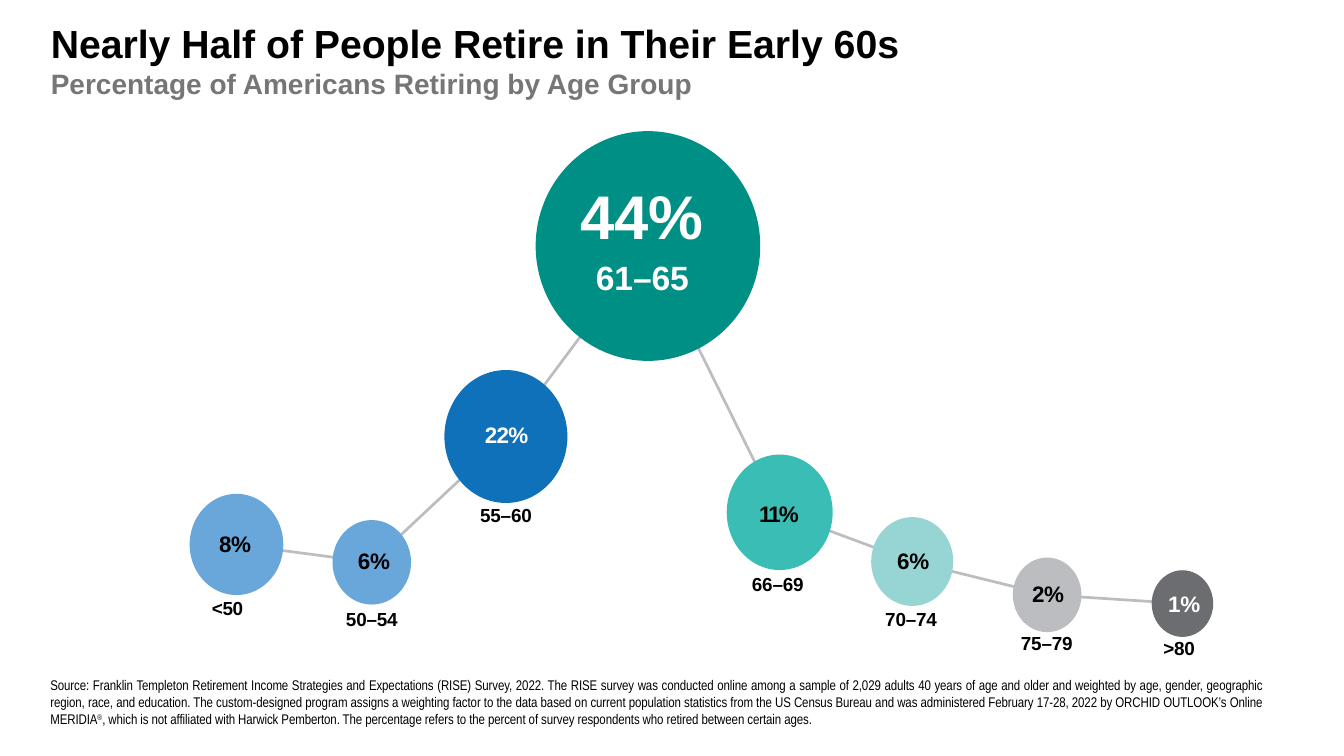
from dataclasses import dataclass

import pptx
import pptx.dml.color
import pptx.enum.shapes
import pptx.enum.text
import pptx.shapes.autoshape
import pptx.slide
import pptx.util

Cm = pptx.util.Cm
Pt = pptx.util.Pt
RGBColor = pptx.dml.color.RGBColor
Align = pptx.enum.text.PP_ALIGN

BLACK = RGBColor(0x00, 0x00, 0x00)
WHITE = RGBColor(0xFF, 0xFF, 0xFF)
GREY = RGBColor(0x76, 0x76, 0x76)
SILVER = RGBColor(0xBB, 0xBD, 0xC0)
SLATE = RGBColor(0x6C, 0x6D, 0x70)
SKY = RGBColor(0x69, 0xA6, 0xDA)
BLUE = RGBColor(0x0F, 0x71, 0xB9)
GREEN = RGBColor(0x00, 0x8F, 0x85)
TEAL = RGBColor(0x3A, 0xBD, 0xB4)
MINT = RGBColor(0x97, 0xD5, 0xD4)

# Label width in cm by number of characters
WIDTHS = {2: 0.87, 3: 1.15, 5: 1.4}


@dataclass
class Run:
    text: str
    size: float
    color: RGBColor = BLACK
    bold: bool = True
    font: str = "Arial"
    track: float = 0
    raised: int = 0


@dataclass
class Line:
    runs: list[Run]
    before: float = 0
    indent: float = 0
    align: Align = Align.LEFT


@dataclass
class Box:
    left: float
    top: float
    width: float
    height: float


@dataclass
class Label:
    text: str
    left: float
    top: float
    color: RGBColor = BLACK
    track: float = -0.2


@dataclass
class Bubble:
    x: float
    y: float
    width: float
    height: float
    fill: RGBColor
    share: Label | None = None
    age: Label | None = None


BUBBLES = [
    Bubble(5.96, 13.72, 2.36, 2.55, SKY,
           Label("8%", 5.49, 13.34), Label("<50", 5.31, 15.01)),
    Bubble(9.37, 14.17, 1.98, 2.13, SKY,
           Label("6%", 8.99, 13.77), Label("50–54", 8.69, 15.27, track=-0.1)),
    Bubble(12.75, 11, 3.1, 3.35, BLUE,
           Label("22%", 12.19, 10.59, WHITE, -0.5), Label("55–60", 12.07, 12.65, track=-0.1)),
    Bubble(16.33, 6.2, 5.66, 5.79, GREEN),
    Bubble(19.65, 12.91, 2.67, 2.91, TEAL,
           Label("11%", 19.1, 12.57, track=-1.4), Label("66–69", 18.92, 14.4, track=-0.1)),
    Bubble(22.99, 14.15, 2.07, 2.24, MINT,
           Label("6%", 22.58, 13.77), Label("70–74", 22.28, 15.27, track=-0.1)),
    Bubble(26.39, 14.99, 1.73, 1.88, SILVER,
           Label("2%", 25.98, 14.58), Label("75–79", 25.7, 15.88, track=-0.1)),
    Bubble(29.8, 15.21, 1.55, 1.68, SLATE,
           Label("1%", 29.41, 14.83, WHITE), Label(">80", 29.29, 16)),
]

NOTE = (
    "Source: Franklin Templeton Retirement Income Strategies and Expectations (RISE) Survey, 2022. "
    "The RISE survey was conducted online among a sample of 2,029 adults 40 years of age and older "
    "and weighted by age, gender, geographic region, race, and education. The custom-designed program "
    "assigns a weighting factor to the data based on current population statistics from the US Census "
    "Bureau and was administered February 17-28, 2022 by ORCHID OUTLOOK’s Online MERIDIA"
)
NOTE_END = (
    ", which is not affiliated with Harwick Pemberton. The percentage refers to the percent of "
    "survey respondents who retired between certain ages."
)


def add_text(slide: pptx.slide.Slide, box: Box, lines: list[Line],
             inset: float = 0.03, left: float = 0.03) -> None:
    shape = slide.shapes.add_textbox(Cm(box.left), Cm(box.top), Cm(box.width), Cm(box.height))
    frame = shape.text_frame
    frame.word_wrap = True
    frame.margin_left, frame.margin_top = Cm(left), Cm(inset)
    frame.margin_right = frame.margin_bottom = 0
    for index, line in enumerate(lines):
        para = frame.add_paragraph() if index else frame.paragraphs[0]
        para.alignment = line.align
        if line.before:
            para.space_before = Pt(line.before)
        if line.indent:
            para._p.get_or_add_pPr().set("marL", str(int(Cm(line.indent))))
        for run in line.runs:
            add_run(para, run)


def add_run(para: pptx.text.text._Paragraph, run: Run) -> None:
    item = para.add_run()
    item.text = run.text
    font = item.font
    font.name, font.size, font.bold = run.font, Pt(run.size), run.bold
    font.color.rgb = run.color
    props = item._r.get_or_add_rPr()
    if run.track:
        props.set("spc", str(round(run.track * 100)))
    if run.raised:
        props.set("baseline", str(run.raised * 1000))


def add_label(slide: pptx.slide.Slide, label: Label, size: float, height: float) -> None:
    box = Box(label.left, label.top, WIDTHS[len(label.text)], height)
    add_text(slide, box, [Line([Run(label.text, size, label.color, track=label.track)])])


def add_path(slide: pptx.slide.Slide, bubbles: list[Bubble]) -> None:
    points = [(Cm(b.x), Cm(b.y)) for b in bubbles]
    build = slide.shapes.build_freeform(*points[0])
    build.add_line_segments(points[1:], close=False)
    path = build.convert_to_shape()
    path.shadow.inherit = False
    path.fill.background()
    path.line.color.rgb = SILVER
    path.line.width = Pt(1.93)


def add_bubble(slide: pptx.slide.Slide, bubble: Bubble) -> None:
    disc = slide.shapes.add_shape(
        pptx.enum.shapes.MSO_SHAPE.OVAL,
        Cm(bubble.x - bubble.width / 2), Cm(bubble.y - bubble.height / 2),
        Cm(bubble.width), Cm(bubble.height))
    disc.shadow.inherit = False
    disc.fill.solid()
    disc.fill.fore_color.rgb = bubble.fill
    disc.line.fill.background()
    if bubble.share:
        add_label(slide, bubble.share, 16, 0.74)
    if bubble.age:
        add_label(slide, bubble.age, 13.5, 0.64)


def main() -> None:
    deck = pptx.Presentation()
    deck.slide_width, deck.slide_height = Cm(33.87), Cm(19.05)
    slide = deck.slides.add_slide(deck.slide_layouts[6])

    # Heading
    add_text(slide, Box(1.25, 0.46, 31.4, 2.1), [
        Line([Run("Nearly Half of People Retire in Their Early 60s", 28)]),
        Line([Run("Percentage of Americans Retiring by Age Group", 20, GREY)], before=0.2),
    ])

    # Bubbles joined by one path
    add_path(slide, BUBBLES)
    for bubble in BUBBLES:
        add_bubble(slide, bubble)

    # Peak group
    add_text(slide, Box(14.61, 4.24, 3.2, 3.3), [
        Line([Run("44%", 44, WHITE, track=-0.2)]),
        Line([Run("61–65", 24, WHITE, track=-0.1)], before=3.5, indent=0.38),
    ], inset=0.25)

    # Source note
    small = {"bold": False, "font": "Arial Narrow"}
    add_text(slide, Box(1.17, 17.02, 30.63, 1.35), [
        Line([Run(NOTE, 10, track=-0.05, **small),
              Run("®", 9.8, raised=26, **small),
              Run(NOTE_END, 10, track=-0.05, **small)], align=Align.JUSTIFY),
    ], left=0.1)

    deck.save("out.pptx")


if __name__ == "__main__":
    main()
